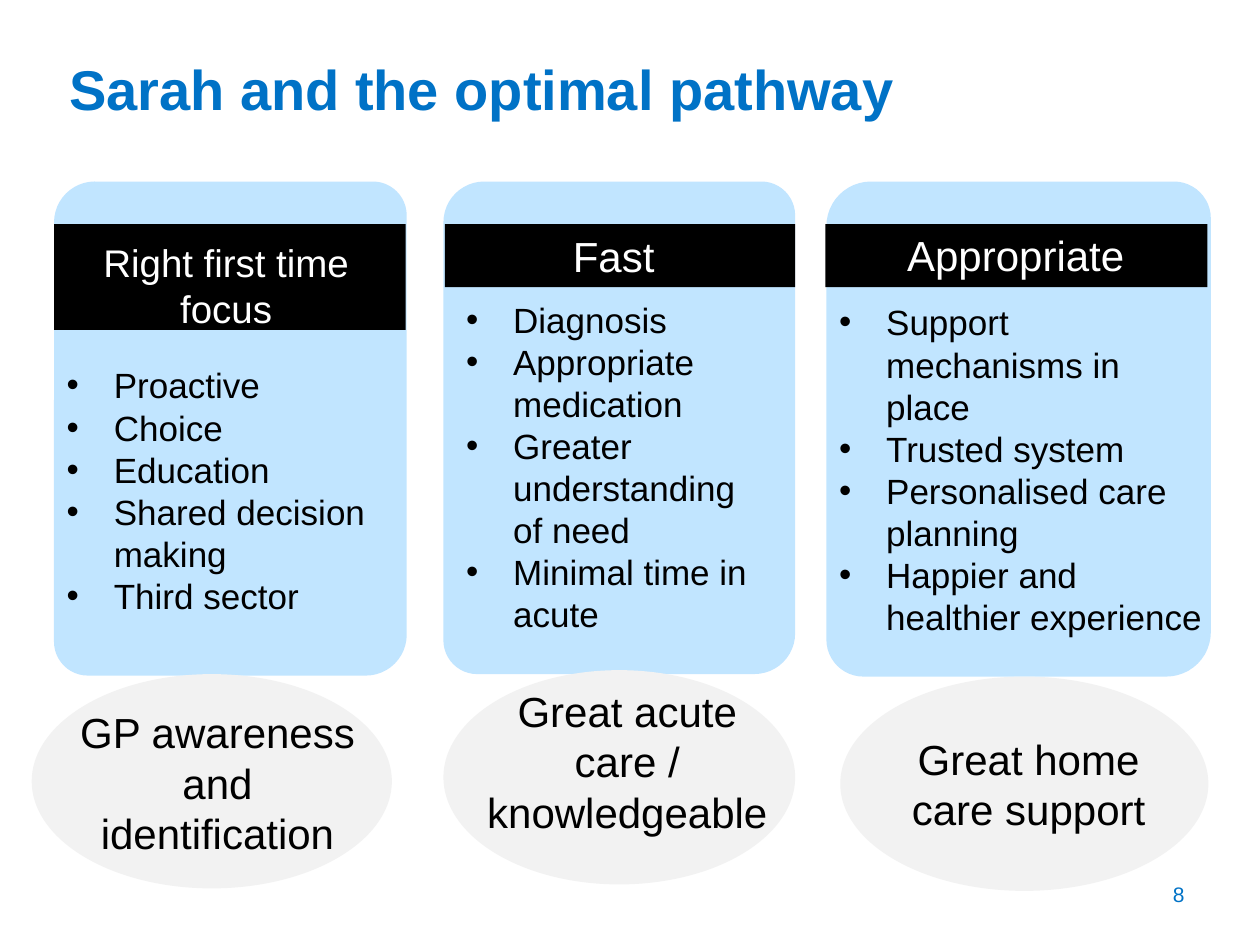
from dataclasses import dataclass

from lxml.etree import SubElement
from pptx import Presentation
from pptx.dml.color import RGBColor
from pptx.enum.shapes import MSO_SHAPE as Shape
from pptx.enum.text import MSO_ANCHOR as Anchor, MSO_AUTO_SIZE as AutoSize, PP_ALIGN as Align
from pptx.oxml.ns import qn
from pptx.util import Cm, Pt

BLUE = RGBColor(0x00, 0x72, 0xC6)
PALE_BLUE = RGBColor(0xC1, 0xE5, 0xFF)
PALE_GREY = RGBColor(0xF2, 0xF2, 0xF2)
BLACK = RGBColor(0x00, 0x00, 0x00)
WHITE = RGBColor(0xFF, 0xFF, 0xFF)

COLUMNS = [
    {
        "card": (1.09, 3.66, 7.11, 9.96),
        "band": (1.09, 4.52, 7.09, 2.13),
        "heading": ("Right first time focus", (0.84, 4.7, 7.44, 2.13), 22),
        "list": (1, (1.09, 7.21, 7.11, 5.38)),
        "items": ["Proactive", "Choice", "Education", "Shared decision making", "Third sector"],
        "ellipse": (0.64, 13.59, 7.26, 4.32),
        "outcome": ("GP awareness and identification", (1.35, 14.12, 6.07, 3.33)),
    },
    {
        "card": (8.94, 3.66, 7.09, 9.93),
        "band": (8.97, 4.52, 7.06, 1.27),
        "heading": ("Fast ", (9.63, 4.52, 5.72, 1.27), 24),
        "list": (2, (9.14, 5.89, 6.71, 7.09)),
        "items": ["Diagnosis", "Appropriate medication", "Greater understanding of need",
                  "Minimal time in acute"],
        "ellipse": (8.94, 13.51, 7.09, 4.32),
        "outcome": ("Great acute care / knowledgeable", (9.42, 13.69, 6.45, 3.33)),
    },
    {
        "card": (16.66, 3.66, 7.75, 9.98),
        "band": (16.64, 4.52, 7.7, 1.27),
        "heading": ("Appropriate", (17.15, 4.5, 6.65, 1.27), 24),
        "list": (4, (16.66, 5.94, 8.15, 7.09)),
        "items": ["Support \nmechanisms in \nplace", "Trusted system", "Personalised care planning",
                  "Happier and healthier experience"],
        "ellipse": (16.94, 13.64, 7.42, 4.32),
        "outcome": ("Great home care support", (17.65, 14.66, 6.17, 2.31)),
    },
]


def assign(target, values):
    """Set each named attribute of the target."""
    for name, value in values.items():
        setattr(target, name, value)


@dataclass
class SlideBuilder:
    """Holds the style and the current slide."""

    slide: object
    font: str = "Arial"
    indent: float = 0.95

    def place(self, shape, box):
        """Move a shape to a box given in centimetres."""
        assign(shape, dict(zip(("left", "top", "width", "height"), map(Cm, box))))

    def format_paragraph(self, paragraph, size, color, align, bold=False):
        """Apply alignment, spacing and font to a paragraph."""
        assign(paragraph, {"alignment": align, "space_before": Pt(0), "space_after": Pt(0),
                           "line_spacing": 1.0})
        assign(paragraph.font, {"name": self.font, "size": Pt(size), "bold": bold})
        paragraph.font.color.rgb = color

    def title(self, text, box):
        """Fill the title placeholder."""
        shape = self.slide.shapes.title
        self.place(shape, box)
        frame = shape.text_frame
        frame.text = text
        assign(frame, {"vertical_anchor": Anchor.MIDDLE, "auto_size": AutoSize.NONE})
        self.format_paragraph(frame.paragraphs[0], 32, BLUE, Align.LEFT, True)

    def shape(self, kind, box, color, adjustments=()):
        """Add a plain filled shape."""
        shape = self.slide.shapes.add_shape(kind, *map(Cm, box))
        shape.shadow.inherit = False
        shape.fill.solid()
        shape.fill.fore_color.rgb = color
        shape.line.fill.background()
        for index, value in enumerate(adjustments):
            shape.adjustments[index] = value

    def text(self, text, box, size, color, align=Align.CENTER):
        """Add a wrapped text box."""
        frame = self.slide.shapes.add_textbox(*map(Cm, box)).text_frame
        frame.word_wrap = True
        paragraph = frame.paragraphs[0]
        paragraph.text = text
        self.format_paragraph(paragraph, size, color, align)

    def bullets(self, index, box, items):
        """Fill a body placeholder with bullets and bring it to the front."""
        shape = next(item for item in self.slide.placeholders
                     if item.placeholder_format.idx == index)
        self.place(shape, box)
        shape.element.getparent().append(shape.element)
        frame = shape.text_frame
        assign(frame, {"vertical_anchor": Anchor.TOP, "auto_size": AutoSize.NONE})
        for position, item in enumerate(items):
            paragraph = frame.add_paragraph() if position else frame.paragraphs[0]
            paragraph.text = item.replace("\n", "\v")
            properties = paragraph._p.get_or_add_pPr()
            properties.set("marL", str(Cm(self.indent)))
            properties.set("indent", str(-Cm(self.indent)))
            SubElement(properties, qn("a:buFont"), typeface=self.font)
            SubElement(properties, qn("a:buChar"), char="•")
            self.format_paragraph(paragraph, 20, BLACK, Align.LEFT)

    def column(self, column):
        """Add a card with its heading, list and outcome."""
        self.shape(Shape.ROUND_2_DIAG_RECTANGLE, column["card"], PALE_BLUE, (0.116, 0.096))
        self.shape(Shape.RECTANGLE, column["band"], BLACK)
        self.text(*column["heading"], WHITE)
        self.bullets(*column["list"], column["items"])
        self.shape(Shape.OVAL, column["ellipse"], PALE_GREY)
        self.text(*column["outcome"], 24, BLACK)

    def remove_empty_placeholders(self):
        """Delete placeholders without text."""
        for shape in list(self.slide.placeholders):
            if not shape.text_frame.text:
                shape.element.getparent().remove(shape.element)


def main():
    """Build and save the slide."""
    presentation = Presentation()
    assign(presentation, {"slide_width": Cm(25.4), "slide_height": Cm(19.05)})
    comparison = presentation.slide_layouts.get_by_name("Comparison")
    builder = SlideBuilder(presentation.slides.add_slide(comparison))
    builder.title("Sarah and the optimal pathway", (1.14, 0.86, 20.45, 1.85))
    for column in COLUMNS:
        builder.column(column)
    builder.text("8", (18.21, 17.65, 5.92, 1.02), 12, BLUE, Align.RIGHT)
    builder.remove_empty_placeholders()
    presentation.save("out.pptx")


if __name__ == "__main__":
    main()
